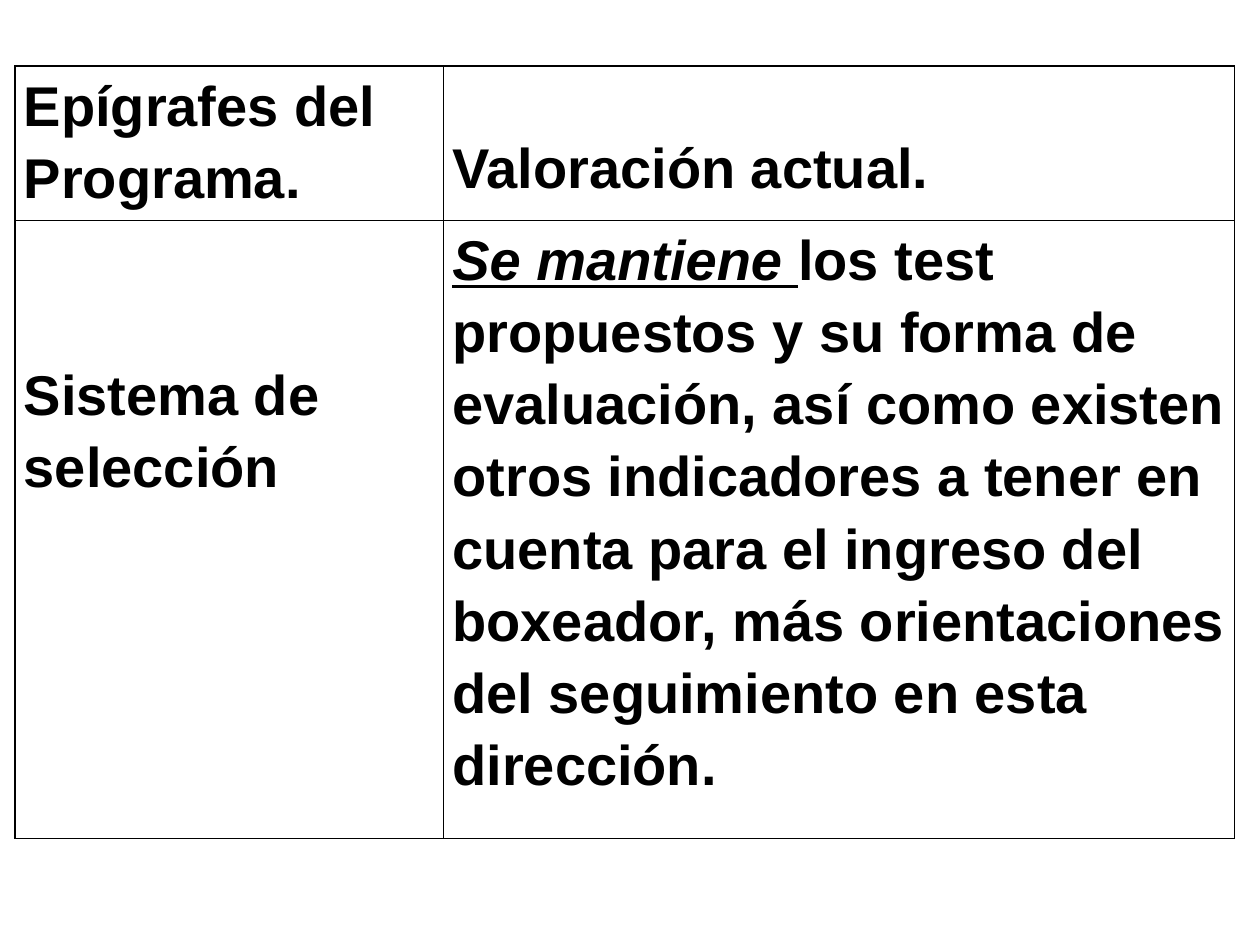
from pptx import Presentation
from pptx.dml.color import RGBColor
from pptx.oxml import parse_xml
from pptx.oxml.ns import nsdecls
from pptx.util import Cm, Pt

BLACK = RGBColor(0x00, 0x00, 0x00)
WHITE = RGBColor(0xFF, 0xFF, 0xFF)


class SlideBuilder:
    font = "Arial"
    size = Pt(32)
    line_spacing = 1.15
    border = Pt(1)
    margin = Cm(0.18)

    def __init__(self, slide):
        self.slide = slide

    def add_borders(self, cell):
        tc_pr = cell._tc.get_or_add_tcPr()
        for i, side in enumerate(("lnL", "lnR", "lnT", "lnB")):
            tc_pr.insert(i, parse_xml(
                f'<a:{side} {nsdecls("a")} w="{self.border}"><a:solidFill>'
                f'<a:srgbClr val="{BLACK}"/></a:solidFill></a:{side}>'))

    def fill_cell(self, cell, runs, top):
        cell.margin_left = cell.margin_right = self.margin
        cell.margin_top, cell.margin_bottom = top, Cm(0)
        cell.fill.solid()
        cell.fill.fore_color.rgb = WHITE
        self.add_borders(cell)
        p = cell.text_frame.paragraphs[0]
        p.line_spacing = self.line_spacing
        for text, stressed in runs:
            r = p.add_run()
            r.text = text
            r.font.name = self.font
            r.font.size = self.size
            r.font.color.rgb = BLACK
            r.font.bold = True
            r.font.italic = r.font.underline = stressed

    def add_table(self, left, top, widths, heights, rows):
        frame = self.slide.shapes.add_table(
            len(heights), len(widths), left, top, sum(widths), sum(heights))
        table = frame.table
        table.first_row = table.horz_banding = False
        for column, width in zip(table.columns, widths):
            column.width = width
        for row, height, contents in zip(table.rows, heights, rows):
            row.height = height
            for cell, (runs, offset) in zip(row.cells, contents):
                self.fill_cell(cell, runs, offset)


def main():
    prs = Presentation()
    prs.slide_width, prs.slide_height = Cm(25.4), Cm(19.05)
    builder = SlideBuilder(prs.slides.add_slide(prs.slide_layouts[6]))
    rows = [
        [
            ([("Epígrafes del Programa.", False)], Cm(0)),
            ([("Valoración actual.", False)], Cm(1.25)),
        ],
        [
            ([("Sistema de selección", False)], Cm(2.72)),
            ([
                ("Se mantiene ", True),
                ("los test propuestos y su forma de evaluación, así como "
                 "existen otros indicadores a tener en cuenta para el ingreso "
                 "del boxeador, más orientaciones del seguimiento en esta "
                 "dirección.", False),
            ], Cm(0)),
        ],
    ]
    builder.add_table(Cm(0.3), Cm(1.33), [Cm(8.64), Cm(15.95)],
                      [Cm(3.11), Cm(12.46)], rows)
    prs.save("out.pptx")


if __name__ == "__main__":
    main()
